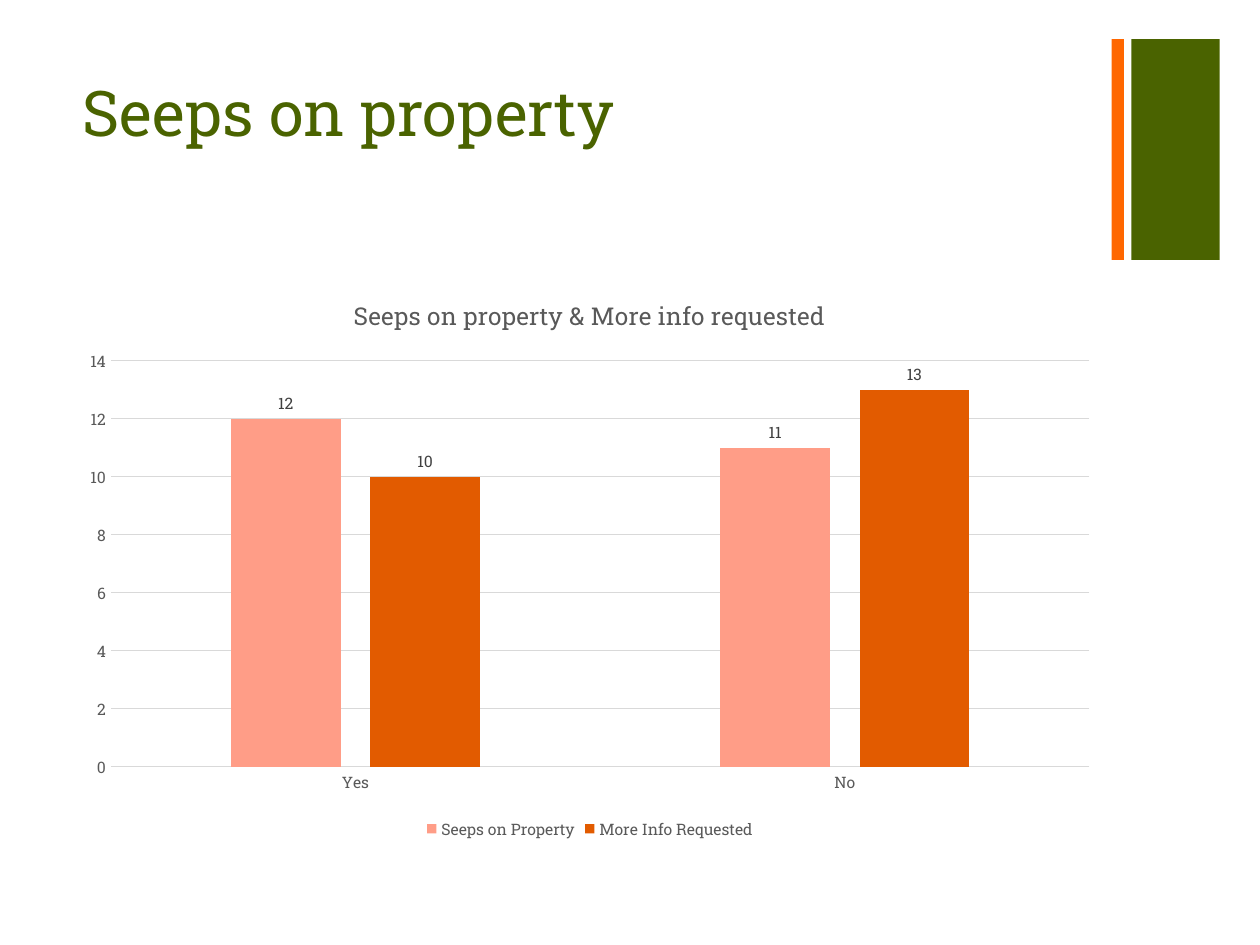
from dataclasses import dataclass

from pptx import Presentation
from pptx.chart.data import CategoryChartData
from pptx.dml.color import RGBColor
from pptx.enum.chart import XL_CHART_TYPE, XL_LABEL_POSITION, XL_LEGEND_POSITION, XL_TICK_MARK
from pptx.enum.shapes import MSO_SHAPE
from pptx.enum.text import MSO_ANCHOR, PP_ALIGN
from pptx.util import Cm, Pt


@dataclass(frozen=True)
class Theme:
    """Colours, typeface and type sizes of the slide."""
    font: str = "Roboto Slab"
    green: str = "4A6300"
    orange: str = "FF6700"
    grey: str = "595959"
    label: str = "404040"
    rule: str = "D9D9D9"
    series: tuple = ("FF9D87", "E25B00")
    title_size: float = 36
    chart_title_size: float = 14
    chart_size: float = 9


THEME = Theme()


def style_font(font, size, color):
    """Apply the theme typeface with a size and colour."""
    font.name = THEME.font
    font.size = Pt(size)
    font.bold = False
    font.color.rgb = RGBColor.from_string(color)


def style_rule(line):
    """Give an axis or gridline the thin grey rule."""
    line.width = Pt(0.75)
    line.color.rgb = RGBColor.from_string(THEME.rule)


def add_corner_bars(slide, left, top, width, height):
    """Draw the narrow orange and wide green bars within the box."""
    narrow, wide = Cm(0.25), Cm(1.78)
    bars = (
        (left, narrow, THEME.orange),
        (left + width - wide, wide, THEME.green),
    )
    for bar_left, bar_width, color in bars:
        bar = slide.shapes.add_shape(MSO_SHAPE.RECTANGLE, bar_left, top, bar_width, height)
        bar.shadow.inherit = False
        bar.fill.solid()
        bar.fill.fore_color.rgb = RGBColor.from_string(color)
        bar.line.fill.background()


def add_title(slide, wording, left, top, width, height):
    """Place and format the title placeholder in the box."""
    title = slide.shapes.title
    title.left, title.top, title.width, title.height = left, top, width, height
    frame = title.text_frame
    frame.text = wording
    frame.word_wrap = True
    frame.vertical_anchor = MSO_ANCHOR.TOP
    heading = frame.paragraphs[0]
    heading.alignment = PP_ALIGN.LEFT
    style_font(heading.runs[0].font, THEME.title_size, THEME.green)


def style_axes(chart):
    """Format the category and value axes."""
    for axis in (chart.category_axis, chart.value_axis):
        axis.major_tick_mark = axis.minor_tick_mark = XL_TICK_MARK.NONE
        style_font(axis.tick_labels.font, THEME.chart_size, THEME.grey)
    style_rule(chart.category_axis.format.line)
    values = chart.value_axis
    values.minimum_scale, values.maximum_scale, values.major_unit = 0, 14, 2
    values.format.line.fill.background()
    values.has_major_gridlines = True
    style_rule(values.major_gridlines.format.line)


def style_columns(plot):
    """Space and colour the columns and label their values."""
    plot.gap_width, plot.overlap = 219, -27
    plot.vary_by_categories = False
    for series, color in zip(plot.series, THEME.series):
        series.format.fill.solid()
        series.format.fill.fore_color.rgb = RGBColor.from_string(color)
        labels = series.data_labels
        labels.show_value = True
        labels.position = XL_LABEL_POSITION.OUTSIDE_END
        style_font(labels.font, THEME.chart_size, THEME.label)


def add_seeps_chart(slide, left, top, width, height):
    """Add the clustered column chart of answers in the box."""
    answers = CategoryChartData(number_format="General")
    answers.categories = ["Yes", "No"]
    answers.add_series("Seeps on Property", (12, 11))
    answers.add_series("More Info Requested", (10, 13))
    chart = slide.shapes.add_chart(
        XL_CHART_TYPE.COLUMN_CLUSTERED, left, top, width, height, answers
    ).chart
    style_font(chart.font, THEME.chart_size, THEME.grey)
    chart.has_title = True
    heading = chart.chart_title.text_frame
    heading.text = "Seeps on property & More info requested"
    style_font(heading.paragraphs[0].runs[0].font, THEME.chart_title_size, THEME.grey)
    chart.chart_title.include_in_layout = False
    chart.has_legend = True
    chart.legend.position = XL_LEGEND_POSITION.BOTTOM
    chart.legend.include_in_layout = False
    style_font(chart.legend.font, THEME.chart_size, THEME.grey)
    style_axes(chart)
    style_columns(chart.plots[0])


def main():
    """Build and save the slide."""
    presentation = Presentation()
    presentation.slide_width, presentation.slide_height = Cm(25.4), Cm(19.05)
    slide = presentation.slides.add_slide(presentation.slide_layouts[5])
    margin, content_width = Cm(1.4), Cm(20.98)
    add_corner_bars(slide, Cm(22.41), Cm(0.79), Cm(2.18), Cm(4.45))
    add_title(slide, "Seeps on property", margin, Cm(1.35), content_width, Cm(3.1))
    add_seeps_chart(slide, margin, Cm(5.51), content_width, Cm(11.51))
    presentation.save("out.pptx")


if __name__ == "__main__":
    main()
